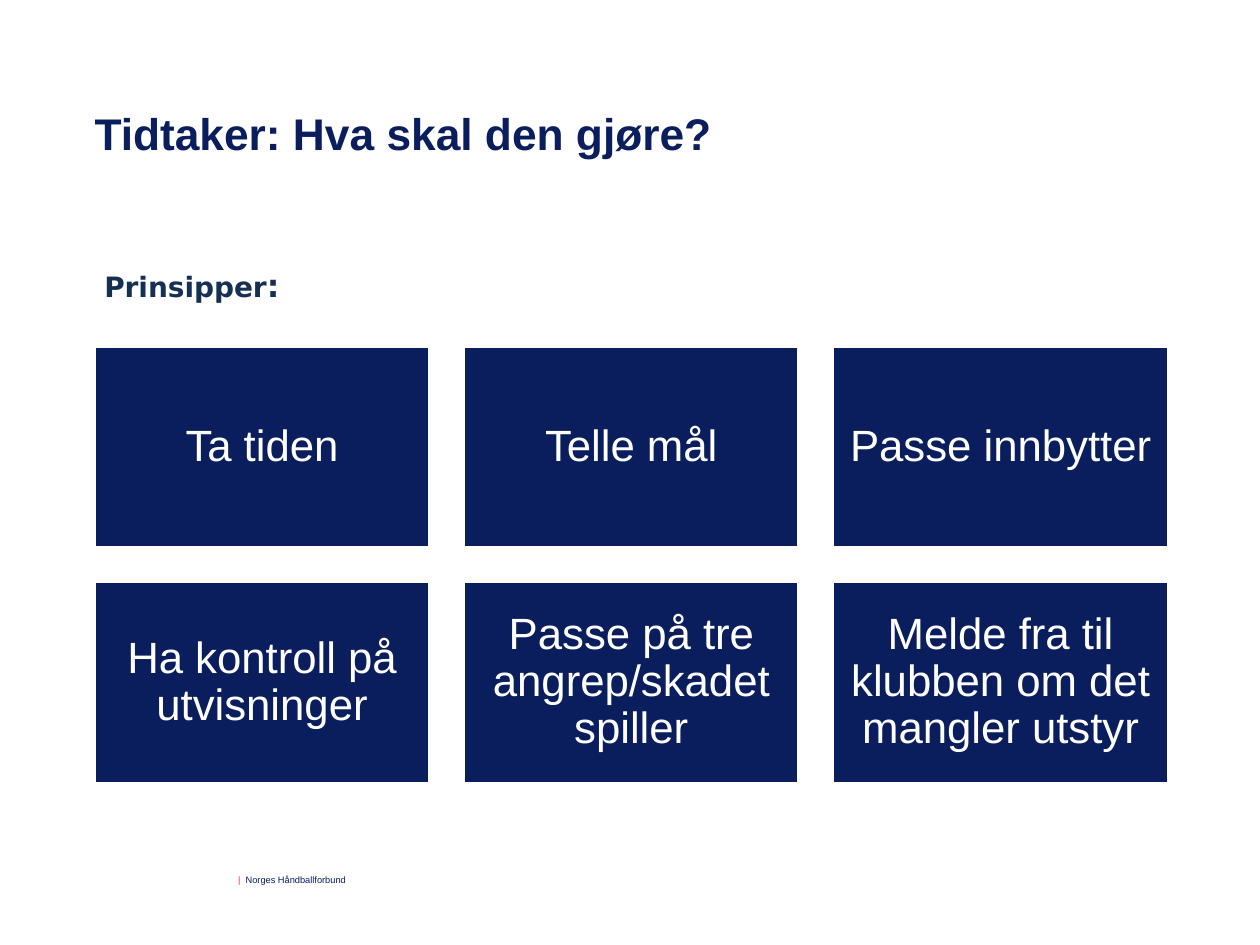
from pptx import Presentation
from pptx.dml.color import RGBColor
from pptx.enum.shapes import MSO_SHAPE
from pptx.enum.text import MSO_ANCHOR, PP_ALIGN
from pptx.util import Pt

RECTANGLE = MSO_SHAPE.RECTANGLE
MIDDLE = MSO_ANCHOR.MIDDLE
CENTER = PP_ALIGN.CENTER

NAVY, SLATE, RED, WHITE = "0A1E5E", "163054", "EA3747", "FFFFFF"

TASKS = [
    "Ta tiden",
    "Telle mål",
    "Passe innbytter",
    "Ha kontroll på utvisninger",
    "Passe på tre angrep/skadet spiller",
    "Melde fra til klubben om det mangler utstyr",
]
COLUMNS = 3
LEFT, TOP = 54, 198
TILE_WIDTH, TILE_HEIGHT = 191.5, 115
COLUMN_STEP, ROW_STEP = 211, 134.5


def color(hex_string):
    return RGBColor.from_string(hex_string)


class SlideBuilder:
    font_name = "Arial"

    def __init__(self, slide):
        self.slide = slide

    def set_margins(self, frame, sideways, upright):
        margins = {
            "margin_left": sideways, "margin_right": sideways,
            "margin_top": upright, "margin_bottom": upright,
        }
        for name, value in margins.items():
            setattr(frame, name, Pt(value))

    def run(self, paragraph, words, size, hex_string, bold=False, font_name=None):
        run = paragraph.add_run()
        run.text = words
        style = {"name": font_name or self.font_name, "size": Pt(size), "bold": bold}
        for name, value in style.items():
            setattr(run.font, name, value)
        run.font.color.rgb = color(hex_string)

    def text(self, box, runs, margins=(0, 0), wrap=True):
        """Add a one-paragraph text box; each run is a tuple of run() arguments."""
        frame = self.slide.shapes.add_textbox(*map(Pt, box)).text_frame
        frame.word_wrap = wrap
        self.set_margins(frame, *margins)
        for run in runs:
            self.run(frame.paragraphs[0], *run)

    def tile(self, box, words):
        tile = self.slide.shapes.add_shape(RECTANGLE, *map(Pt, box))
        tile.shadow.inherit = False
        tile.fill.solid()
        tile.fill.fore_color.rgb = color(NAVY)
        tile.line.color.rgb = color(WHITE)
        tile.line.width = Pt(1.5)
        frame = tile.text_frame
        frame.word_wrap = True
        frame.vertical_anchor = MIDDLE
        self.set_margins(frame, 7.5, 7.5)
        paragraph = frame.paragraphs[0]
        paragraph.alignment = CENTER
        paragraph.line_spacing = 0.9
        self.run(paragraph, words, 25, WHITE)


def main():
    deck = Presentation()
    deck.slide_width, deck.slide_height = Pt(720), Pt(540)
    builder = SlideBuilder(deck.slides.add_slide(deck.slide_layouts[6]))

    builder.text((140.4, 499.5, 67, 6.5), [("Norges Håndballforbund", 5.3, NAVY)])
    builder.text((136, 499.5, 1.5, 6.5), [("|", 5.3, RED)], wrap=False)
    builder.text((LEFT, 60.5, 613, 82), [("Tidtaker: Hva skal den gjøre?", 25.3, NAVY, True)])

    for index, task in enumerate(TASKS):
        row, column = divmod(index, COLUMNS)
        left, top = LEFT + column * COLUMN_STEP, TOP + row * ROW_STEP
        builder.tile((left, top, TILE_WIDTH, TILE_HEIGHT), task)

    heading = [
        ("Prinsipper", 16, SLATE, True, "DejaVu Sans"),
        (":", 18, SLATE, True, "DejaVu Sans"),
    ]
    builder.text((52.5, 148.5, 351, 29), heading, margins=(7.2, 3.6))

    deck.save("out.pptx")


if __name__ == "__main__":
    main()
